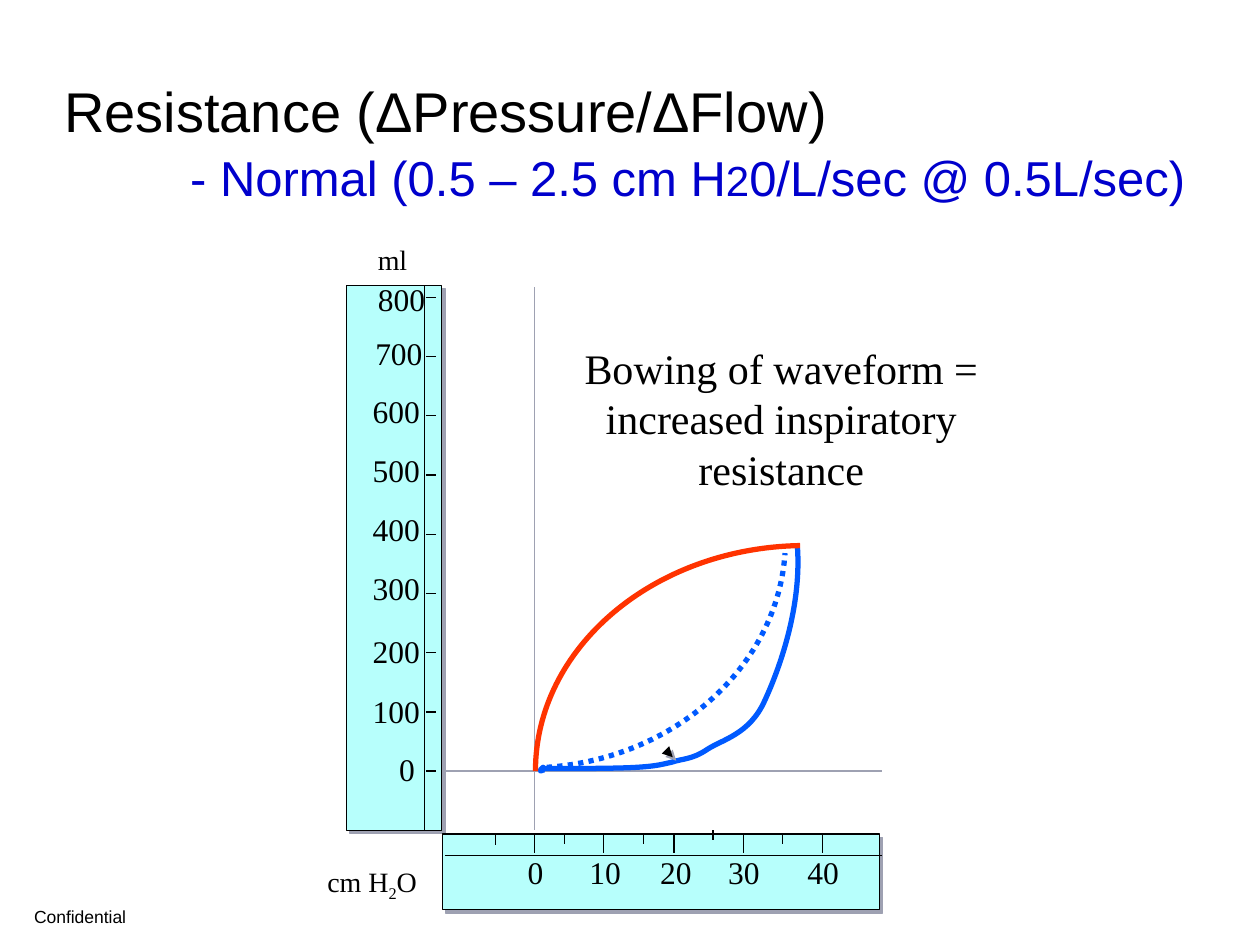
from lxml import etree
from pptx import Presentation
from pptx import util as u
from pptx.dml.color import RGBColor
from pptx.enum import dml, shapes, text
from pptx.oxml import ns

COLORS = {"ink": "000000", "accent": "0000CC", "bar": "B7FFFC", "axis": "9EA1B2",
          "inspiration": "005AFF", "expiration": "FF3300"}
SERIF, SANS = "Times New Roman", "Arial"
CELL = u.Inches(0.1)  # the slide is a grid of 100 columns by 75 rows


def cells(*values):
    return [round(v * CELL) for v in values]


def rgb(name):
    return RGBColor.from_string(COLORS[name])


class Board:
    FRAME = {"word_wrap": True, "vertical_anchor": text.MSO_ANCHOR.TOP}

    def __init__(self, prs):
        self.s = prs.slides.add_slide(prs.slide_layouts[5])

    def run(self, p, content, size, color="ink", font=SERIF, baseline=None):
        r = p.add_run()
        r.text = content
        for key, value in {"size": u.Pt(size), "name": font}.items():
            setattr(r.font, key, value)
        r.font.color.rgb = rgb(color)
        if baseline:
            r.font._element.set("baseline", str(baseline))

    def title(self, box, lines, tab):
        sp = self.s.shapes.title
        sp.left, sp.top, sp.width, sp.height = cells(*box)
        tf = sp.text_frame
        frame = {"word_wrap": True, "vertical_anchor": text.MSO_ANCHOR.MIDDLE,
                 "margin_bottom": u.Inches(0.17)}
        for key, value in frame.items():
            setattr(tf, key, value)
        p = tf.paragraphs[0]
        p.alignment = text.PP_ALIGN.LEFT
        tabs = etree.SubElement(p._p.get_or_add_pPr(), ns.qn("a:tabLst"))
        etree.SubElement(tabs, ns.qn("a:tab"), pos=str(cells(tab)[0]), algn="l")
        for i, line in enumerate(lines):
            if i:
                p.add_line_break()
            for content, size, color in line:
                self.run(p, content, size, color, SANS)

    def text(self, box, runs, align=text.PP_ALIGN.LEFT, **frame):
        tf = self.s.shapes.add_textbox(*cells(*box)).text_frame
        for key, value in {**self.FRAME, **frame}.items():
            setattr(tf, key, value)
        p = tf.paragraphs[0]
        p.alignment = align
        for r in runs:
            self.run(p, **r)

    def label(self, box, content, size=18):
        self.text(box, [{"content": content, "size": size}], word_wrap=False)

    def shadow(self, effects):
        shade = etree.SubElement(effects, ns.qn("a:outerShdw"), dist="35921", dir="2700000",
                                 algn="ctr", rotWithShape="0")
        etree.SubElement(shade, ns.qn("a:srgbClr"), val=COLORS["axis"])

    def bar(self, *box):
        sp = self.s.shapes.add_shape(shapes.MSO_SHAPE.RECTANGLE, *cells(*box))
        sp.fill.solid()
        sp.fill.fore_color.rgb = rgb("bar")
        self.outline(sp.line)
        sp.shadow.inherit = False
        self.shadow(sp._element.spPr.find(ns.qn("a:effectLst")))

    def outline(self, line, color="ink", width=0.75):
        line.color.rgb = rgb(color)
        line.width = u.Pt(width)

    def line(self, x1, y1, x2, y2, color="ink", arrow=False):
        cxn = self.s.shapes.add_connector(shapes.MSO_CONNECTOR.STRAIGHT, *cells(x1, y1, x2, y2))
        self.outline(cxn.line, color)
        if arrow:
            etree.SubElement(cxn.line._get_or_add_ln(), ns.qn("a:tailEnd"), type="triangle")
        effects = etree.SubElement(cxn._element.spPr, ns.qn("a:effectLst"))
        if arrow:
            self.shadow(effects)

    def curve(self, points, color, dash=None):
        """Cubic curves through a start point and then three points per piece."""
        start, *rest = [cells(*point) for point in points]
        builder = self.s.shapes.build_freeform(*start, scale=1.0)
        builder.add_line_segments(rest, close=False)
        sp = builder.convert_to_shape()
        segments = list(sp._element.iter(ns.qn("a:lnTo")))
        for i in range(0, len(segments), 3):
            cubic = etree.Element(ns.qn("a:cubicBezTo"))
            segments[i].addprevious(cubic)
            for segment in segments[i:i + 3]:
                cubic.append(segment[0])
                segment.getparent().remove(segment)
        sp.fill.background()
        sp.shadow.inherit = False
        self.outline(sp.line, color, 3)
        if dash:
            sp.line.dash_style = dash


def volume_axis(board):
    board.label((29, 18.8, 4.4, 3.7), "ml", 16)
    board.bar(27.5, 22.65, 7.55, 43.25)
    board.line(33.7, 22.7, 33.7, 65.9)
    label_tops = (59, 54.4, 49.7, 44.7, 40, 35.3, 30.6, 26, 21.7)
    label_lefts = {0: 30.7, 700: 28.8, 800: 29}
    for i, top in enumerate(label_tops):
        volume, y = 100 * i, 61.2 - 4.7 * i
        board.line(33.8, y, 34.6, y)
        width = 5.8 if volume else 3.3
        board.label((label_lefts.get(volume, 28.6), top, width, 4), str(volume))


def pressure_axis(board):
    board.text((25, 68.1, 9.3, 3.7), [
        {"content": "cm H", "size": 16},
        {"content": "2", "size": 16, "baseline": -25000},
        {"content": "O", "size": 16}], word_wrap=False)
    board.bar(35.1, 66.2, 34.7, 6)
    board.line(35.3, 67.9, 70, 67.9)
    majors = ((42.4, 40.9), (47.9, 45.8), (53.5, 51.4), (59, 56.8), (65.3, 63.1))
    for i, (x, left) in enumerate(majors):
        board.line(x, 66.2, x, 67.7)
        board.label((left, 67.2, 4.5 if i else 3.3, 4), str(10 * i))
    for x, top in ((39.3, 66.3), (44.8, 66.2), (51.1, 66.2), (56.6, 65.9), (62.1, 66.2)):
        board.line(x, top, x, top + 0.75)


def loop(board):
    board.line(42.4, 22.8, 42.4, 65.9, "axis")
    board.line(35.3, 61.2, 70, 61.2, "axis")
    board.curve([(43.4, 60.9), (53.6, 60.2), (61.7, 52.9), (62.3, 43.9)],
                "inspiration", dml.MSO_LINE.ROUND_DOT)
    board.curve([(63.3, 43.5), (63.6, 48.2), (61.9, 53), (60.7, 55.6),
                 (59.5, 58.3), (57.3, 58.7), (56.1, 59.5),
                 (54.9, 60.3), (54.2, 60.2), (53.3, 60.5),
                 (52.4, 60.7), (52.1, 60.8), (50.6, 60.9),
                 (49.1, 61), (45.2, 61), (44, 61),
                 (42.8, 61), (43.3, 61), (43.2, 61),
                 (43, 61), (42.9, 61.1), (42.9, 61.1),
                 (42.9, 61.1), (43.1, 60.9), (43.1, 60.9),
                 (43.1, 60.9), (43, 61), (43, 61),
                 (42.9, 61.1), (42.9, 61.2), (42.9, 61.2),
                 (42.9, 61.2), (43.1, 61.1), (43.2, 61.1)], "inspiration")
    board.curve([(63.5, 43.3), (51.9, 43.5), (42.5, 51.4), (42.5, 61.2)], "expiration")
    board.line(53, 59.7, 53.4, 60.1, arrow=True)
    board.text((42.4, 26.7, 39.2, 13), [
        {"content": "Bowing of waveform = increased inspiratory resistance", "size": 24}],
        align=text.PP_ALIGN.CENTER)


def main():
    prs = Presentation()
    prs.slide_width, prs.slide_height = cells(100, 75)
    board = Board(prs)
    board.title((4.1, 5.6, 93.2, 12.5), [
        [("Resistance (ΔPressure/ΔFlow)", 32, "ink")],
        [("\t", 30, "ink"), ("- Normal (0.5 – 2.5 cm H", 28, "accent"),
         ("2", 24, "accent"), ("0/L/sec @ 0.5L/sec)", 28, "accent")]], tab=10)
    volume_axis(board)
    pressure_axis(board)
    loop(board)
    board.text((2.7, 71.9, 20.1, 1.7), [{"content": "Confidential", "size": 10, "font": SANS}],
               vertical_anchor=text.MSO_ANCHOR.BOTTOM, margin_left=0, margin_right=0,
               margin_top=0, margin_bottom=0)
    prs.save("out.pptx")


if __name__ == "__main__":
    main()
